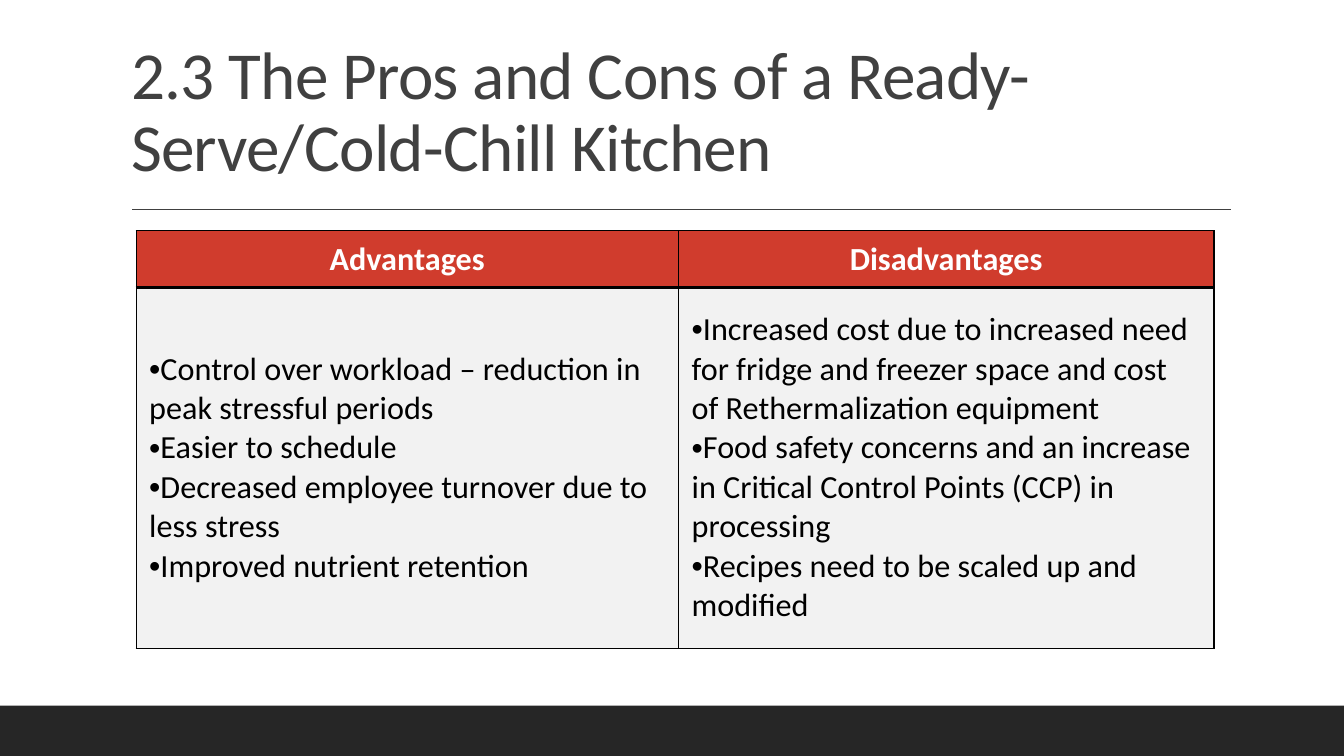
from lxml import etree
from pptx import Presentation
from pptx.dml.color import RGBColor
from pptx.enum.shapes import MSO_CONNECTOR, MSO_SHAPE
from pptx.enum.text import MSO_ANCHOR, MSO_AUTO_SIZE, PP_ALIGN
from pptx.oxml.ns import qn
from pptx.util import Inches, Pt

LEFT, CENTER = PP_ALIGN.LEFT, PP_ALIGN.CENTER
BOTTOM, MIDDLE = MSO_ANCHOR.BOTTOM, MSO_ANCHOR.MIDDLE
COLORS = {
    "background": "FFFFFF", "title": "404040", "footer": "262626",
    "header": "D03C2D", "header text": "FFFFFF",
    "body": "F2F2F2", "body text": "000000", "border": "000000",
}
COLUMNS = {
    "Advantages": [
        "Control over workload – reduction in peak stressful periods",
        "Easier to schedule",
        "Decreased employee turnover due to less stress",
        "Improved nutrient retention",
    ],
    "Disadvantages": [
        "Increased cost due to increased need for fridge and freezer space "
        "and cost of Rethermalization equipment",
        "Food safety concerns and an increase in Critical Control Points (CCP) in processing",
        "Recipes need to be scaled up and modified",
    ],
}


def color(name):
    return RGBColor.from_string(COLORS[name])


def set_border(cell, side, points):
    line = etree.SubElement(cell._tc.get_or_add_tcPr(), qn(f"a:ln{side}"), w=str(Pt(points)))
    fill = etree.SubElement(line, qn("a:solidFill"))
    etree.SubElement(fill, qn("a:srgbClr"), val=COLORS["border"])


presentation = Presentation()
presentation.slide_width = Inches(13.33)
presentation.slide_height = Inches(7.5)
slide = presentation.slides.add_slide(presentation.slide_layouts[5])
slide.background.fill.solid()
slide.background.fill.fore_color.rgb = color("background")

# Title
title = slide.shapes.title
title.left, title.top, title.width, title.height = map(Inches, (1.2, 0.31, 11, 1.59))
title.text_frame.text = "2.3 The Pros and Cons of a Ready-Serve/Cold-Chill Kitchen"
title.text_frame.auto_size = MSO_AUTO_SIZE.NONE
title.text_frame.vertical_anchor = BOTTOM
paragraph = title.text_frame.paragraphs[0]
paragraph.alignment = LEFT
paragraph.line_spacing = 0.9
paragraph.font.size = Pt(48)
paragraph.font.name = "Calibri"
paragraph.font.color.rgb = color("title")
paragraph._p.get_or_add_pPr().get_or_add_defRPr().set("spc", "-50")

# Rule under the title
rule = slide.shapes.add_connector(
    MSO_CONNECTOR.STRAIGHT, Inches(1.31), Inches(2.08), Inches(12.21), Inches(2.08))
rule.line.color.rgb = color("title")
rule.line.width = Pt(1)
etree.SubElement(rule._element.spPr, qn("a:effectLst"))

# Footer band
footer = slide.shapes.add_shape(
    MSO_SHAPE.RECTANGLE, 0, Inches(7), presentation.slide_width, Inches(0.5))
footer.shadow.inherit = False
footer.fill.solid()
footer.fill.fore_color.rgb = color("footer")
footer.line.fill.background()

# Table of advantages and disadvantages
table = slide.shapes.add_table(
    2, 2, Inches(1.35), Inches(2.29), Inches(10.69), Inches(4.14)).table
for column, width in zip(table.columns, (5.38, 5.31)):
    column.width = Inches(width)
for row, height in zip(table.rows, (0.56, 3.58)):
    row.height = Inches(height)

for column_index, (heading, points) in enumerate(COLUMNS.items()):
    for row_index, (part, lines) in enumerate((("header", [heading]), ("body", points))):
        is_header = part == "header"
        cell = table.cell(row_index, column_index)
        cell.vertical_anchor = MIDDLE
        cell.margin_left = cell.margin_right = Inches(0.13)
        cell.margin_top = cell.margin_bottom = Inches(0.06)
        divider = "B" if is_header else "T"
        for side in "LRTB":
            set_border(cell, side, 2 if side == divider else 1)
        cell.fill.solid()
        cell.fill.fore_color.rgb = color(part)
        cell.text_frame.text = "\n".join(lines)
        for paragraph in cell.text_frame.paragraphs:
            paragraph.alignment = CENTER if is_header else LEFT
            if not is_header:
                properties = paragraph._p.get_or_add_pPr()
                etree.SubElement(properties, qn("a:buFont"), typeface="Arial")
                etree.SubElement(properties, qn("a:buChar"), char="•")
            paragraph.font.size = Pt(23)
            paragraph.font.name = "Calibri"
            paragraph.font.bold = is_header
            paragraph.font.color.rgb = color(f"{part} text")

presentation.save("out.pptx")
